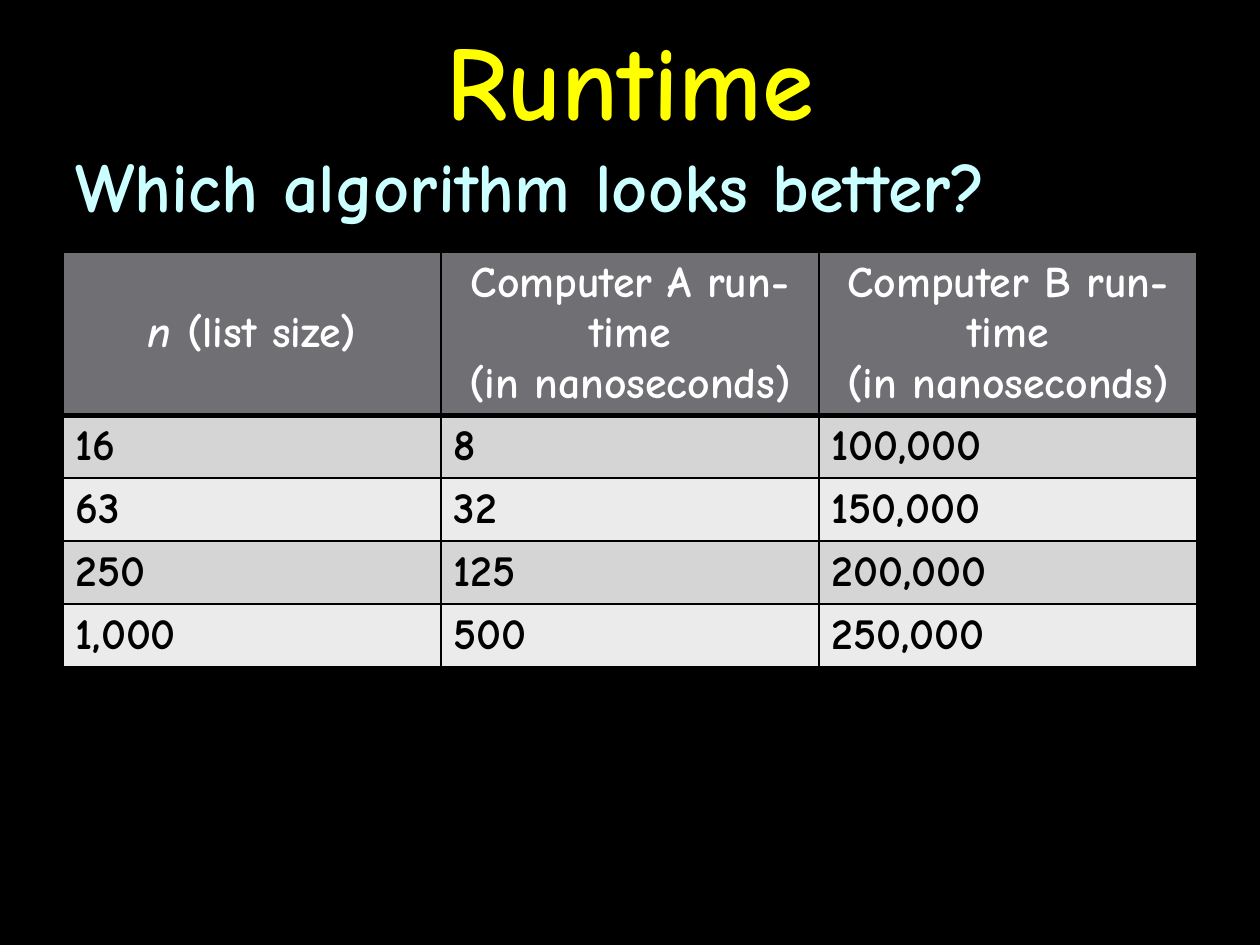
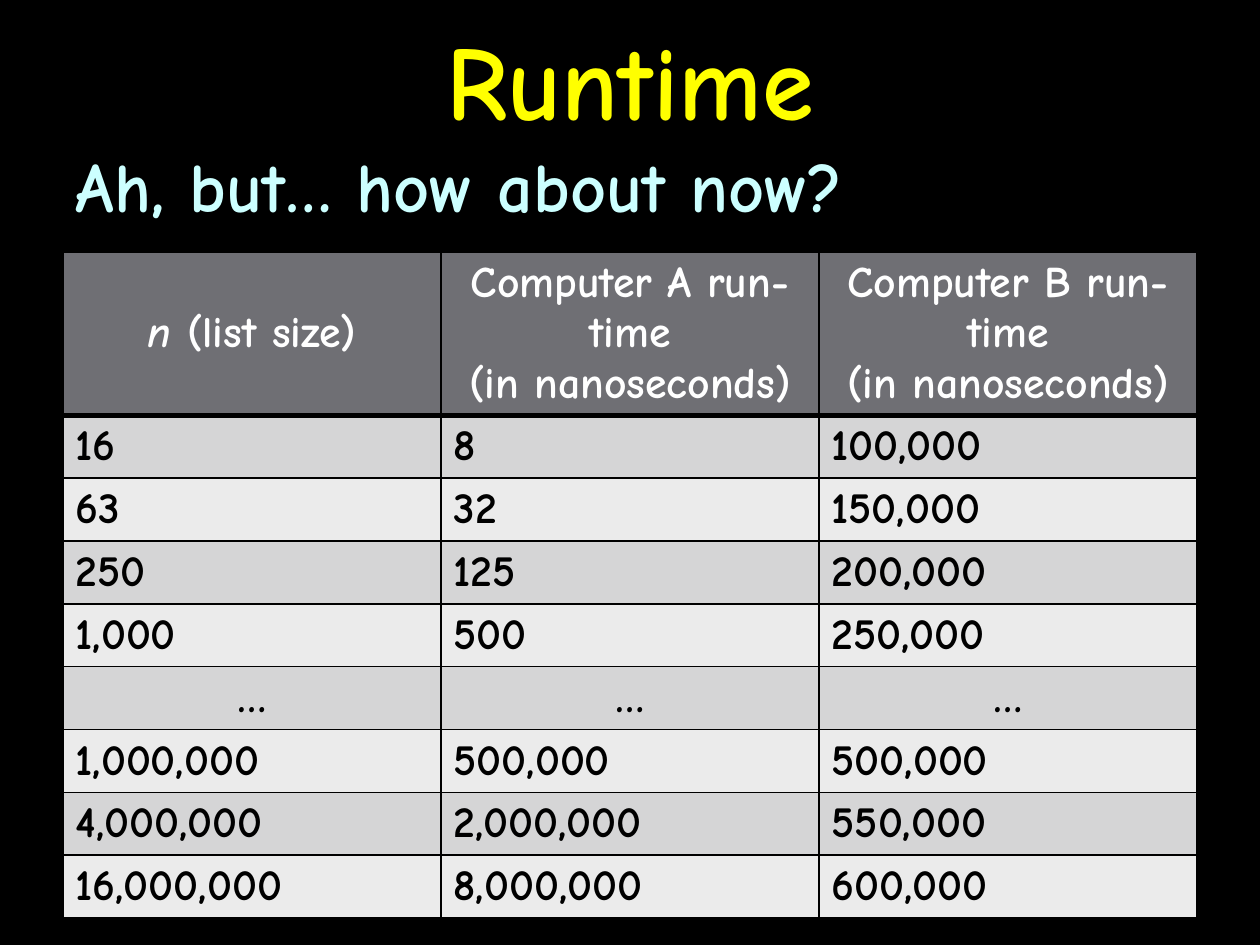
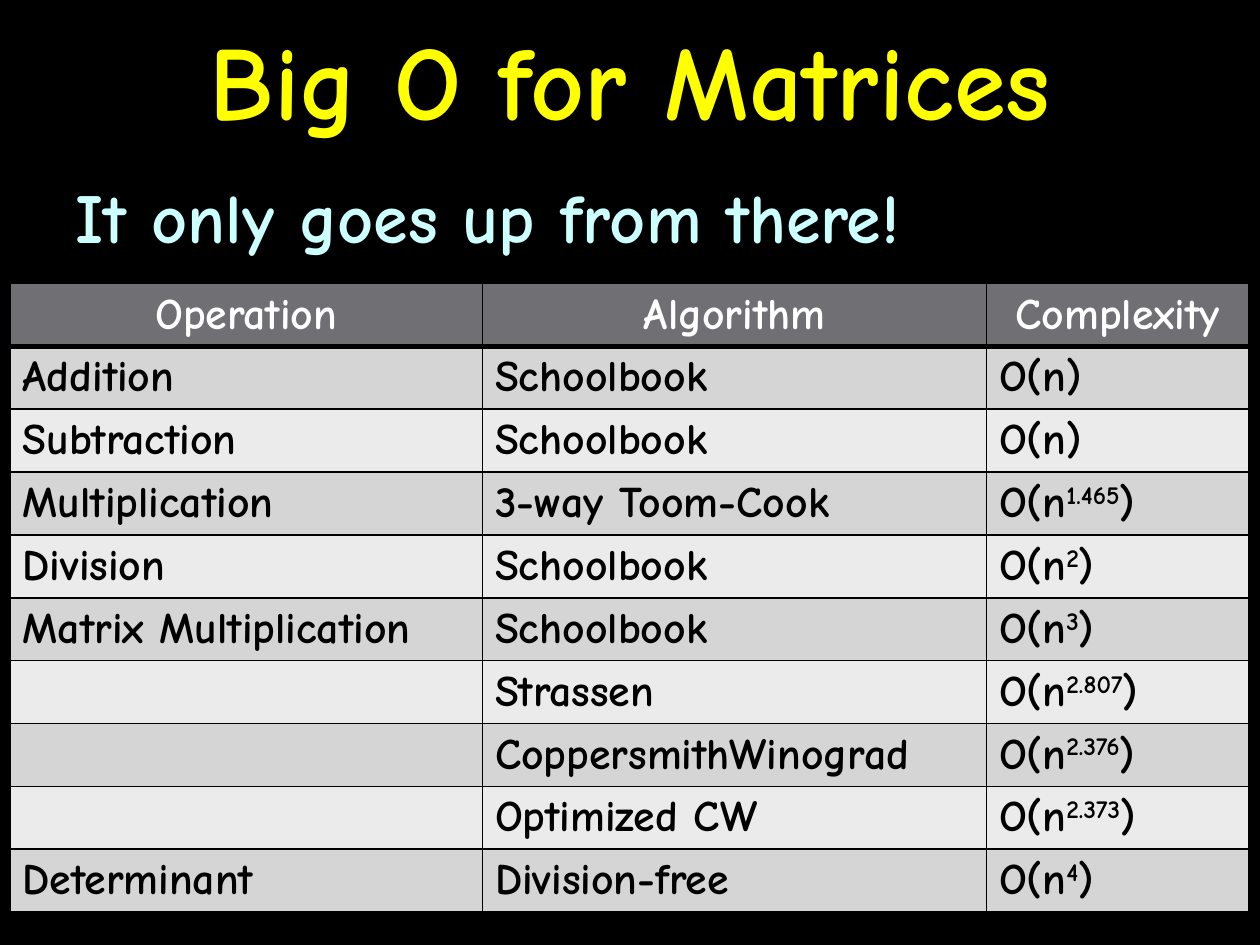
from dataclasses import dataclass

from lxml import etree
from pptx import Presentation
from pptx.dml.color import RGBColor
from pptx.enum.text import MSO_ANCHOR, MSO_AUTO_SIZE, PP_ALIGN
from pptx.oxml.ns import qn
from pptx.util import Inches, Pt

# Shared look
BLACK = RGBColor(0x00, 0x00, 0x00)
WHITE = RGBColor(0xFF, 0xFF, 0xFF)
TITLE_YELLOW = RGBColor(0xFF, 0xFF, 0x00)
BODY_CYAN = RGBColor(0xCC, 0xFF, 0xFF)
HEADER_GREY = RGBColor(0x6F, 0x6F, 0x74)
BAND_DARK = RGBColor(0xD5, 0xD5, 0xD6)
BAND_LIGHT = RGBColor(0xEB, 0xEB, 0xEB)
FONT = "Comic Neue"
TITLE_SIZE, BODY_SIZE, TABLE_SIZE = Pt(60), Pt(40), Pt(25)
ROW_HEIGHT = Inches(0.41)
MIDDLE, TOP = MSO_ANCHOR.MIDDLE, MSO_ANCHOR.TOP
CENTER, LEFT = PP_ALIGN.CENTER, PP_ALIGN.LEFT
NO_AUTOFIT = MSO_AUTO_SIZE.NONE
TITLE_AND_CONTENT = 1
ELLIPSIS = "…"


@dataclass(frozen=True)
class Span:
    text: str
    italic: bool = False
    raised: bool = False


Cell = tuple[Span, ...]


@dataclass(frozen=True)
class TableSlide:
    title: str
    statement: str
    statement_top: float
    table_box: tuple[float, float, float]  # left, top, height
    column_widths: tuple[float, ...]
    header: tuple[Cell, ...]
    rows: list[tuple[Cell, ...]]


def plain(*texts: str) -> tuple[Cell, ...]:
    """One cell for each text; an empty text gives an empty cell."""
    return tuple((Span(text),) if text else () for text in texts)


def complexity(operation: str, algorithm: str, exponent: str = "") -> tuple[Cell, ...]:
    order = (Span("O(n"), Span(exponent, raised=True), Span(")")) if exponent else (Span("O(n)"),)
    return (*plain(operation, algorithm), order)


# Content
RUNTIME_HEADER = (
    (Span("n", italic=True), Span(" (list size)")),
    *plain(*(f"Computer {name} run-time\n(in nanoseconds)" for name in "AB")),
)
SMALL_LISTS = [
    plain("16", "8", "100,000"),
    plain("63", "32", "150,000"),
    plain("250", "125", "200,000"),
    plain("1,000", "500", "250,000"),
]
LARGE_LISTS = [
    plain(ELLIPSIS, ELLIPSIS, ELLIPSIS),
    plain("1,000,000", "500,000", "500,000"),
    plain("4,000,000", "2,000,000", "550,000"),
    plain("16,000,000", "8,000,000", "600,000"),
]
MATRIX_OPERATIONS = [
    complexity("Addition", "Schoolbook"),
    complexity("Subtraction", "Schoolbook"),
    complexity("Multiplication", "3-way Toom-Cook", "1.465"),
    complexity("Division", "Schoolbook", "2"),
    complexity("Matrix Multiplication", "Schoolbook", "3"),
    complexity("", "Strassen", "2.807"),
    complexity("", "CoppersmithWinograd", "2.376"),
    complexity("", "Optimized CW", "2.373"),
    complexity("Determinant", "Division-free", "4"),
]
SLIDES = [
    TableSlide("Runtime", "Which algorithm looks better?", 1.08,
               (0.5, 2, 3.42), (3, 3, 3), RUNTIME_HEADER, SMALL_LISTS),
    TableSlide("Runtime", "Ah, but… how about now?", 1.08,
               (0.5, 2, 5.48), (3, 3, 3), RUNTIME_HEADER, SMALL_LISTS + LARGE_LISTS),
    TableSlide("Big O for Matrices", "It only goes up from there!", 1.33,
               (0.08, 2.25, 5.17), (3.75, 4, 2.08),
               plain("Operation", "Algorithm", "Complexity"), MATRIX_OPERATIONS),
]


# Text
def add_span(paragraph, span: Span, size: Pt, color: RGBColor) -> None:
    for index, line in enumerate(span.text.split("\n")):
        if index:
            paragraph.add_line_break()
        run = paragraph.add_run()
        run.text = line
        font = run.font
        font.name, font.size, font.bold = FONT, size, True
        font.italic = span.italic
        font.color.rgb = color
        if span.raised:
            run._r.get_or_add_rPr().set("baseline", "30000")


def fill_placeholder(placeholder, text: str, box: tuple[float, ...], size: Pt,
                     color: RGBColor, align, anchor) -> None:
    placeholder.left, placeholder.top, placeholder.width, placeholder.height = map(Inches, box)
    frame = placeholder.text_frame
    frame.auto_size, frame.vertical_anchor = NO_AUTOFIT, anchor
    paragraph = frame.paragraphs[0]
    paragraph.alignment = align
    properties = paragraph._p.get_or_add_pPr()
    properties.set("marL", "0")
    properties.set("indent", "0")
    etree.SubElement(properties, qn("a:buNone"))
    add_span(paragraph, Span(text), size, color)


# Table
def set_borders(cell, bottom_width: Pt) -> None:
    properties = cell._tc.get_or_add_tcPr()
    widths = {"a:lnL": Pt(1), "a:lnR": Pt(1), "a:lnT": Pt(1), "a:lnB": bottom_width}
    for position, (side, width) in enumerate(widths.items()):
        border = etree.Element(qn(side), w=str(width))
        solid = etree.SubElement(border, qn("a:solidFill"))
        etree.SubElement(solid, qn("a:srgbClr"), val=str(BLACK))
        properties.insert(position, border)


def fill_cell(cell, content: Cell, row: int) -> None:
    is_header = row == 0
    cell.vertical_anchor = MIDDLE
    cell.fill.solid()
    cell.fill.fore_color.rgb = HEADER_GREY if is_header else BAND_DARK if row % 2 else BAND_LIGHT
    set_borders(cell, Pt(3) if is_header else Pt(1))
    paragraph = cell.text_frame.paragraphs[0]
    paragraph.alignment = CENTER if is_header or content == (Span(ELLIPSIS),) else LEFT
    for span in content:
        add_span(paragraph, span, TABLE_SIZE, WHITE if is_header else BLACK)


def add_data_table(slide, content: TableSlide) -> None:
    left, top, height = map(Inches, content.table_box)
    lines = [content.header, *content.rows]
    frame = slide.shapes.add_table(len(lines), len(content.column_widths), left, top,
                                   Inches(sum(content.column_widths)), height)
    table = frame.table
    table.horz_banding = False
    for column, width in zip(table.columns, content.column_widths):
        column.width = Inches(width)
    for row, line in enumerate(lines):
        table.rows[row].height = ROW_HEIGHT
        for column, cell_content in enumerate(line):
            fill_cell(table.cell(row, column), cell_content, row)
    frame.height = height


def add_table_slide(presentation, content: TableSlide) -> None:
    slide = presentation.slides.add_slide(presentation.slide_layouts[TITLE_AND_CONTENT])
    slide.background.fill.solid()
    slide.background.fill.fore_color.rgb = BLACK
    fill_placeholder(slide.shapes.title, content.title, (0, 0, 10, 1.25),
                     TITLE_SIZE, TITLE_YELLOW, CENTER, MIDDLE)
    fill_placeholder(slide.placeholders[1], content.statement,
                     (0.5, content.statement_top, 9, 6.17), BODY_SIZE, BODY_CYAN, LEFT, TOP)
    add_data_table(slide, content)


def main() -> None:
    presentation = Presentation()
    presentation.slide_width, presentation.slide_height = Inches(10), Inches(7.5)
    for content in SLIDES:
        add_table_slide(presentation, content)
    presentation.save("out.pptx")


if __name__ == "__main__":
    main()
